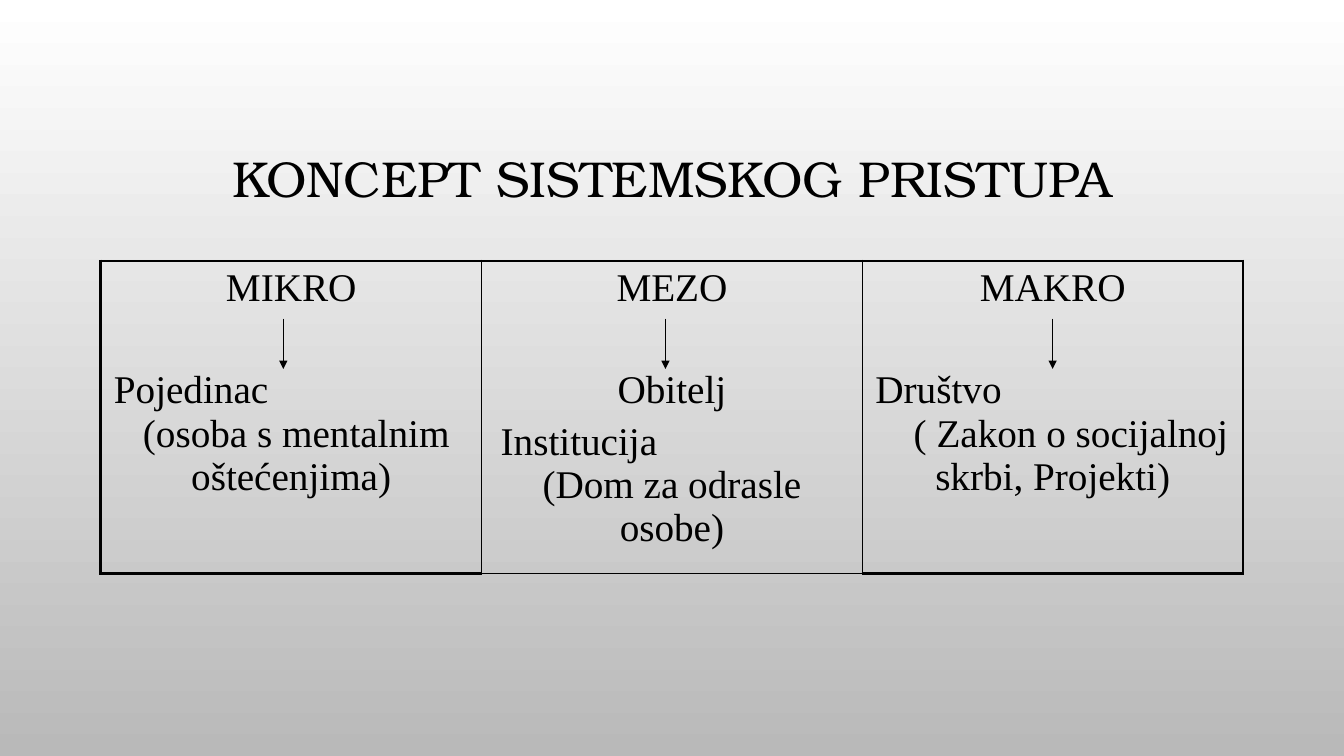
"""Build the slide on the levels of the systemic approach."""
import pptx
import pptx.util
import pptx.dml.color
import pptx.enum.shapes
import pptx.enum.text
import pptx.oxml
import pptx.oxml.ns

Inches, Pt = pptx.util.Inches, pptx.util.Pt
RGB = pptx.dml.color.RGBColor.from_string
ALIGN = pptx.enum.text.PP_ALIGN
ANCHOR = pptx.enum.text.MSO_ANCHOR
CENTER, LEFT = ALIGN.CENTER, ALIGN.LEFT

THEME = {
    "ink": "000000", "top": "FFFFFF", "base": "B9B9B9",
    "head": "TeX Gyre Bonum", "body": "Times New Roman",
    "title": 36, "text": 28, "thick": 2.25, "thin": 1,
}
TITLE = "KONCEPT SISTEMSKOG PRISTUPA"
GAP, STEP = 42.5, 5.5
LEVELS = [
    {"arrow": 2.81, "edges": {"L": "thick", "R": "thin", "T": "thick", "B": "thick"},
     "lines": [("MIKRO", {}),
               ("Pojedinac", {"align": LEFT, "before": GAP}),
               ("(osoba s mentalnim oštećenjima)", {"indent": 0.1})]},
    {"arrow": 6.6, "edges": {"L": "thin", "R": "thin", "T": "thick", "B": "thin"},
     "lines": [("MEZO", {}),
               ("Obitelj", {"before": GAP}),
               ("Institucija", {"align": LEFT, "before": STEP, "indent": 0.06}),
               ("(Dom za odrasle osobe)", {})]},
    {"arrow": 10.44, "edges": {"L": "thin", "R": "thick", "T": "thick", "B": "thick"},
     "lines": [("MAKRO", {}),
               ("Društvo", {"align": LEFT, "before": GAP}),
               ("( Zakon o socijalnoj skrbi, Projekti)", {"indent": 0.36})]},
]
SIDE, WIDTH = 1, 11.33
TABLE_TOP, TABLE_HIGH = 2.59, 2.92
ARROW_TOP, ARROW_END = 3.16, 3.66


def write(para, text, font="body", size="text", align=CENTER, before=0, indent=0):
    """Fill one paragraph with formatted text."""
    para.alignment = align
    para.space_before = Pt(before)
    if indent:
        props = para._p.get_or_add_pPr()
        props.set("marL", "0")
        props.set("indent", str(Inches(indent)))
    run = para.add_run()
    run.text = text
    run.font.name = THEME[font]
    run.font.size = Pt(THEME[size])
    run.font.color.rgb = RGB(THEME["ink"])
    return run


def paint(slide):
    """Give the slide its vertical gradient."""
    fill = slide.background.fill
    fill.gradient()
    fill.gradient_angle = 270
    for stop, name in zip(fill.gradient_stops, ("top", "base")):
        stop.color.rgb = RGB(THEME[name])


def add_title(slide):
    """Place the heading."""
    box = slide.shapes.add_textbox(Inches(SIDE), Inches(1.3), Inches(WIDTH), Inches(1))
    frame = box.text_frame
    frame.word_wrap = True
    frame.vertical_anchor = ANCHOR.MIDDLE
    para = frame.paragraphs[0]
    para.line_spacing = 0.9
    write(para, TITLE, font="head", size="title")


def edge(cell, side, weight):
    """Draw one border of a cell."""
    cell._tc.get_or_add_tcPr().append(pptx.oxml.parse_xml(
        f'<a:ln{side} {pptx.oxml.ns.nsdecls("a")} w="{Pt(THEME[weight])}">'
        f'<a:solidFill><a:srgbClr val="{THEME["ink"]}"/></a:solidFill></a:ln{side}>'))


def add_levels(slide):
    """Place the table with one column for each level."""
    table = slide.shapes.add_table(
        1, len(LEVELS), Inches(SIDE), Inches(TABLE_TOP),
        Inches(WIDTH), Inches(TABLE_HIGH)).table
    table.first_row = table.horz_banding = False
    for col, level in enumerate(LEVELS):
        cell = table.cell(0, col)
        for side, weight in level["edges"].items():
            edge(cell, side, weight)
        cell.fill.background()
        cell.margin_left = cell.margin_right = Inches(0.13)
        cell.margin_top = cell.margin_bottom = Inches(0.05)
        frame = cell.text_frame
        for row, (text, style) in enumerate(level["lines"]):
            para = frame.add_paragraph() if row else frame.paragraphs[0]
            write(para, text, **style)


def add_arrow(slide, x):
    """Draw an arrow from a level to its content."""
    line = slide.shapes.add_connector(
        pptx.enum.shapes.MSO_CONNECTOR.STRAIGHT,
        Inches(x), Inches(ARROW_TOP), Inches(x), Inches(ARROW_END))
    line.line.color.rgb = RGB(THEME["ink"])
    line.line.width = Pt(THEME["thin"])
    space = pptx.oxml.ns.nsdecls("a")
    line.line._get_or_add_ln().append(
        pptx.oxml.parse_xml(f'<a:tailEnd {space} type="triangle"/>'))
    line._element.spPr.append(pptx.oxml.parse_xml(f'<a:effectLst {space}/>'))


def main():
    """Build and save the slide."""
    deck = pptx.Presentation()
    deck.slide_width, deck.slide_height = Inches(13.33), Inches(7.5)
    slide = deck.slides.add_slide(deck.slide_layouts[6])
    paint(slide)
    add_title(slide)
    add_levels(slide)
    for level in LEVELS:
        add_arrow(slide, level["arrow"])
    deck.save("out.pptx")


if __name__ == "__main__":
    main()
